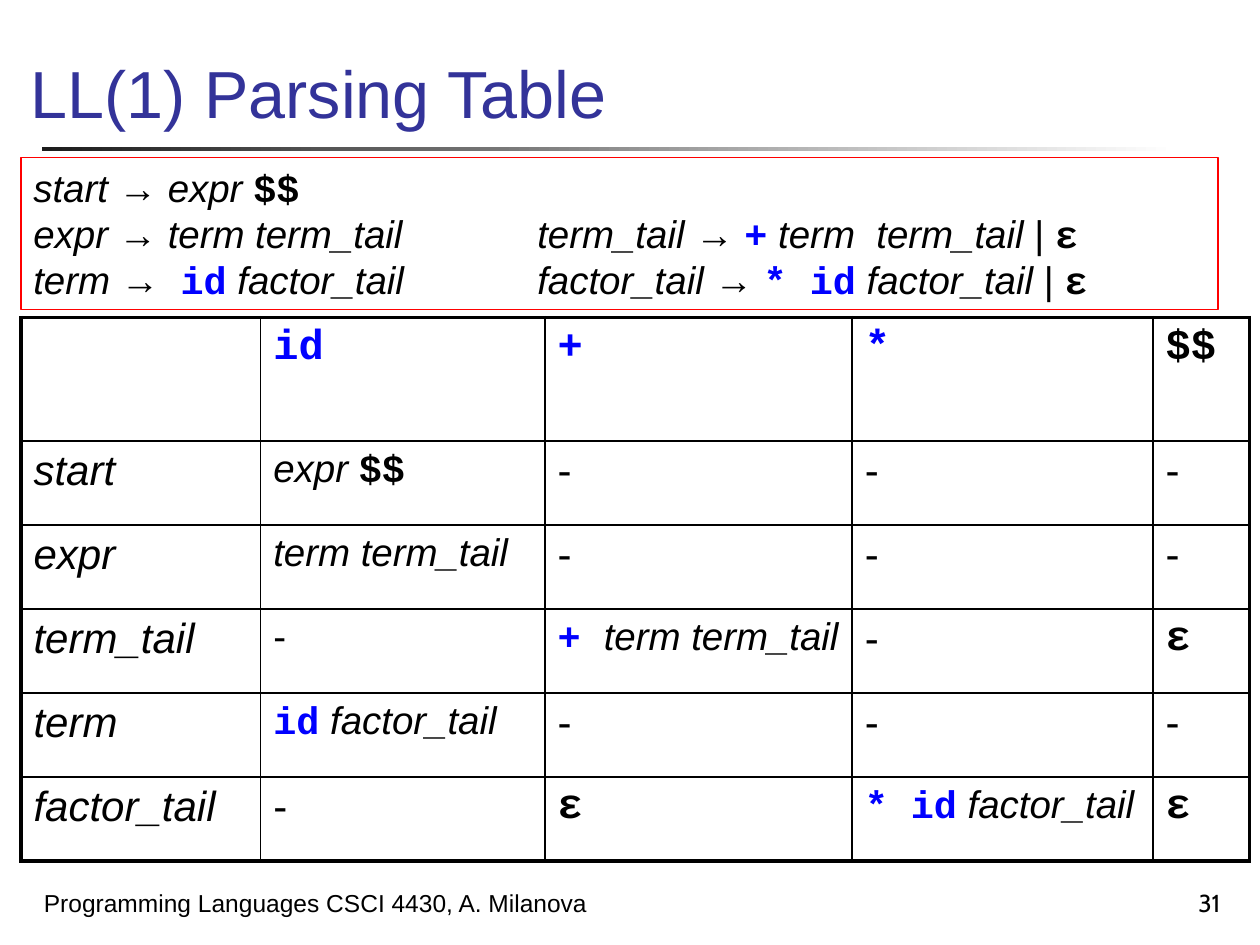
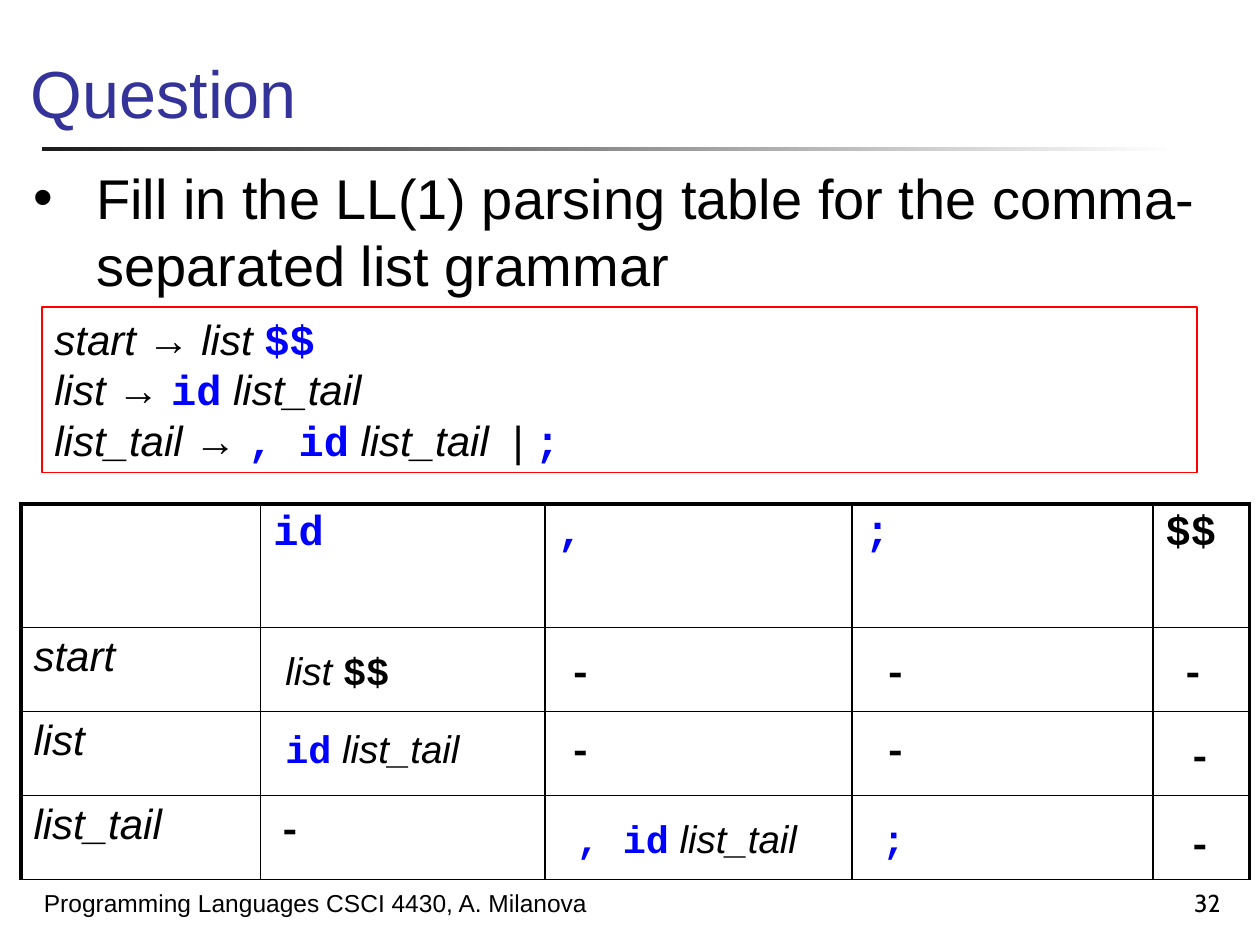
from lxml import etree
from pptx import Presentation
from pptx import util as u
from pptx.dml.color import RGBColor
from pptx.enum import shapes, text
from pptx.oxml import ns

Pt = u.Pt
BLACK = RGBColor(0x00, 0x00, 0x00)
CHARCOAL = RGBColor(0x1C, 0x1C, 0x1C)
WHITE = RGBColor(0xFF, 0xFF, 0xFF)
INDIGO = RGBColor(0x33, 0x33, 0x99)
BLUE = RGBColor(0x00, 0x00, 0xFF)
RED = RGBColor(0xFF, 0x00, 0x00)

# Each span is a (style, text) pair that names one of these formats.
STYLES = {
    "plain": {"name": "Arial", "bold": False, "italic": False, "color": BLACK},
    "rule": {"name": "Arial", "bold": False, "italic": True, "color": BLACK},
    "token": {"name": "Courier New", "bold": True, "italic": False, "color": BLUE},
    "end": {"name": "Courier New", "bold": True, "italic": False, "color": BLACK},
    "title": {"name": "Arial", "bold": False, "italic": False, "color": INDIGO},
    "number": {"name": "Cabin", "bold": False, "italic": False, "color": BLACK},
}
DASH = [("plain", "-")]
CODE_DASH = [("end", "-")]
EPSILON = [("end", "ε")]
END_MARK = ("end", "$$")
ID = ("token", "id")

COLUMN_WIDTHS = [137, 162.5, 175.5, 172, 55]
HEADER_HEIGHT, ROW_HEIGHT = 70.5, 48
THIN, THICK = 1, 2.25
SECOND_RULE_TAB = 288


def write(frame, lines, size):
    """Fill a text frame with one paragraph per list of spans."""
    for index, line in enumerate(lines):
        para = frame.paragraphs[0] if index == 0 else frame.add_paragraph()
        para.alignment = text.PP_ALIGN.LEFT
        for style, words in line:
            span = para.add_run()
            span.text = words
            span.font.size = Pt(size)
            for key, value in STYLES[style].items():
                if key == "color":
                    span.font.color.rgb = value
                else:
                    setattr(span.font, key, value)


def add_text(page, left, top, width, height, lines, size, **settings):
    box = page.shapes.add_textbox(Pt(left), Pt(top), Pt(width), Pt(height))
    settings = {"word_wrap": True, **settings}
    for key, value in settings.items():
        setattr(box.text_frame, key, value)
    write(box.text_frame, lines, size)
    return box


PAGES = [
    {
        "title": "LL(1) Parsing Table",
        "number": "31",
        "table_top": 181.5,
        "bottom_border": THICK,
        "cells": [
            [[], [ID], [("token", "+")], [("token", "*")], [END_MARK]],
            [[("rule", "start")], [("rule", "expr "), END_MARK], DASH, DASH, DASH],
            [[("rule", "expr")], [("rule", "term term_tail")], DASH, DASH, DASH],
            [[("rule", "term_tail")], DASH,
             [("token", "+ "), ("rule", "term term_tail")], DASH, EPSILON],
            [[("rule", "term")], [ID, ("rule", " factor_tail")], DASH, DASH, DASH],
            [[("rule", "factor_tail")], DASH, EPSILON,
             [("token", "* id"), ("rule", " factor_tail")], EPSILON],
        ],
        "grammar_box": (12, 90, 684, 87),
        "grammar_size": 22,
        "grammar": [
            [("rule", "start → expr "), END_MARK],
            [("rule", "expr → term term_tail\tterm_tail → "), ("token", "+"),
             ("rule", " term  term_tail "), ("plain", "| "), ("end", "ε")],
            [("rule", "term →  "), ID, ("rule", " factor_tail\tfactor_tail → "),
             ("token", "* id"), ("rule", " factor_tail "), ("plain", "| "), ("end", "ε")],
        ],
    },
    {
        "title": "Question",
        "number": "32",
        "table_top": 288,
        "bottom_border": THIN,
        "cells": [
            [[], [ID], [("token", ",")], [("token", ";")], [END_MARK]],
            [[("rule", "start")], [], [], [], []],
            [[("rule", "list")], [], [], [], []],
            [[("rule", "list_tail")], [], [], [], []],
        ],
        "grammar_box": (24, 175.5, 660, 94.5),
        "grammar_size": 24,
        "grammar": [
            [("rule", "start → list "), ("token", "$$")],
            [("rule", "list → "), ID, ("rule", " list_tail")],
            [("rule", "list_tail → "), ("token", ", id"),
             ("rule", " list_tail  | "), ("token", ";")],
        ],
    },
]

# Answers laid over the empty table cells: left, top, width, spans
ANSWERS = [
    (156, 366, 76.5, [("rule", "list "), END_MARK]),
    (156, 410.5, 116.5, [ID, ("rule", " list_tail")]),
    (322.5, 462, 144, [("token", ", id"), ("rule", " list_tail")]),
    (497, 462, 28, [("token", ";")]),
    (152, 456, 28, CODE_DASH),
    (318, 366, 28, CODE_DASH),
    (318, 410.5, 28, CODE_DASH),
    (498, 366, 28, CODE_DASH),
    (498, 410.5, 28, CODE_DASH),
    (668, 366, 28, CODE_DASH),
    (672, 414, 28, CODE_DASH),
    (672, 464.5, 28, CODE_DASH),
]

deck = Presentation()
deck.slide_width, deck.slide_height = Pt(720), Pt(540)
bottom = {"vertical_anchor": text.MSO_ANCHOR.BOTTOM}

for content in PAGES:
    page = deck.slides.add_slide(deck.slide_layouts[6])

    # Shared title, fading rule and footer
    divider = page.shapes.add_shape(
        shapes.MSO_SHAPE.RECTANGLE, Pt(24), Pt(84), Pt(648), Pt(2.25))
    divider.shadow.inherit = False
    divider.line.fill.background()
    divider.fill.gradient()
    divider.fill.gradient_angle = 0
    for stop, color in zip(divider.fill.gradient_stops, (CHARCOAL, WHITE)):
        stop.color.rgb = color
    add_text(page, 10.5, 0, 685.5, 79, [[("title", content["title"])]], 38, **bottom)
    number = add_text(page, 554.5, 492, 150, 36,
                      [[("number", content["number"])]], 14, **bottom)
    number.text_frame.paragraphs[0].alignment = text.PP_ALIGN.RIGHT
    add_text(page, 18, 492, 372, 36,
             [[("plain", "Programming Languages CSCI 4430, A. Milanova")]], 14, **bottom)

    # Parsing table
    cells = content["cells"]
    last_row, last_column = len(cells) - 1, len(COLUMN_WIDTHS) - 1
    table = page.shapes.add_table(
        len(cells), len(COLUMN_WIDTHS), Pt(12), Pt(content["table_top"]),
        Pt(sum(COLUMN_WIDTHS)), Pt(HEADER_HEIGHT + ROW_HEIGHT * last_row)).table
    table.first_row = table.horz_banding = False
    for column, width in zip(table.columns, COLUMN_WIDTHS):
        column.width = Pt(width)
    for r, row in enumerate(cells):
        table.rows[r].height = Pt(ROW_HEIGHT if r else HEADER_HEIGHT)
        for c, spans in enumerate(row):
            cell = table.cell(r, c)
            borders = {
                "a:lnL": THIN if c else THICK,
                "a:lnR": THICK if c == last_column else THIN,
                "a:lnT": THIN if r else THICK,
                "a:lnB": content["bottom_border"] if r == last_row else THIN,
            }
            properties = cell._tc.get_or_add_tcPr()
            for tag, width in borders.items():
                edge = etree.SubElement(properties, ns.qn(tag), w=str(Pt(width)))
                fill = etree.SubElement(edge, ns.qn("a:solidFill"))
                etree.SubElement(fill, ns.qn("a:srgbClr"), val=str(BLACK))
            cell.fill.background()
            small = len(spans) > 1 or (c == 1 and 0 < r < last_row)
            write(cell.text_frame, [spans], 22 if small else 24)

    # Grammar in its red frame, with a tab stop for a second rule on a line
    grammar = page.shapes.add_shape(
        shapes.MSO_SHAPE.RECTANGLE, *[Pt(value) for value in content["grammar_box"]])
    grammar.shadow.inherit = False
    grammar.fill.background()
    grammar.line.color.rgb = RED
    grammar.line.width = Pt(0.75)
    grammar.text_frame.word_wrap = True
    grammar.text_frame.vertical_anchor = text.MSO_ANCHOR.TOP
    write(grammar.text_frame, content["grammar"], content["grammar_size"])
    for para in grammar.text_frame.paragraphs:
        tabs = etree.SubElement(para._p.get_or_add_pPr(), ns.qn("a:tabLst"))
        etree.SubElement(tabs, ns.qn("a:tab"), pos=str(Pt(SECOND_RULE_TAB)), algn="l")

# The exercise and its answers on the last page
task = add_text(page, 12, 90, 696, 85, [[(
    "plain", "Fill in the LL(1) parsing table for the comma-separated list grammar")]], 32)
bullet = task.text_frame.paragraphs[0]._p.get_or_add_pPr()
bullet.set("marL", str(Pt(36)))
bullet.set("indent", str(-Pt(36)))
etree.SubElement(bullet, ns.qn("a:buFont"), typeface="Arial")
etree.SubElement(bullet, ns.qn("a:buChar"), char="•")

for left, top, width, spans in ANSWERS:
    add_text(page, left, top, width, 34, [spans], 22, word_wrap=False,
             auto_size=text.MSO_AUTO_SIZE.SHAPE_TO_FIT_TEXT)

deck.save("out.pptx")
